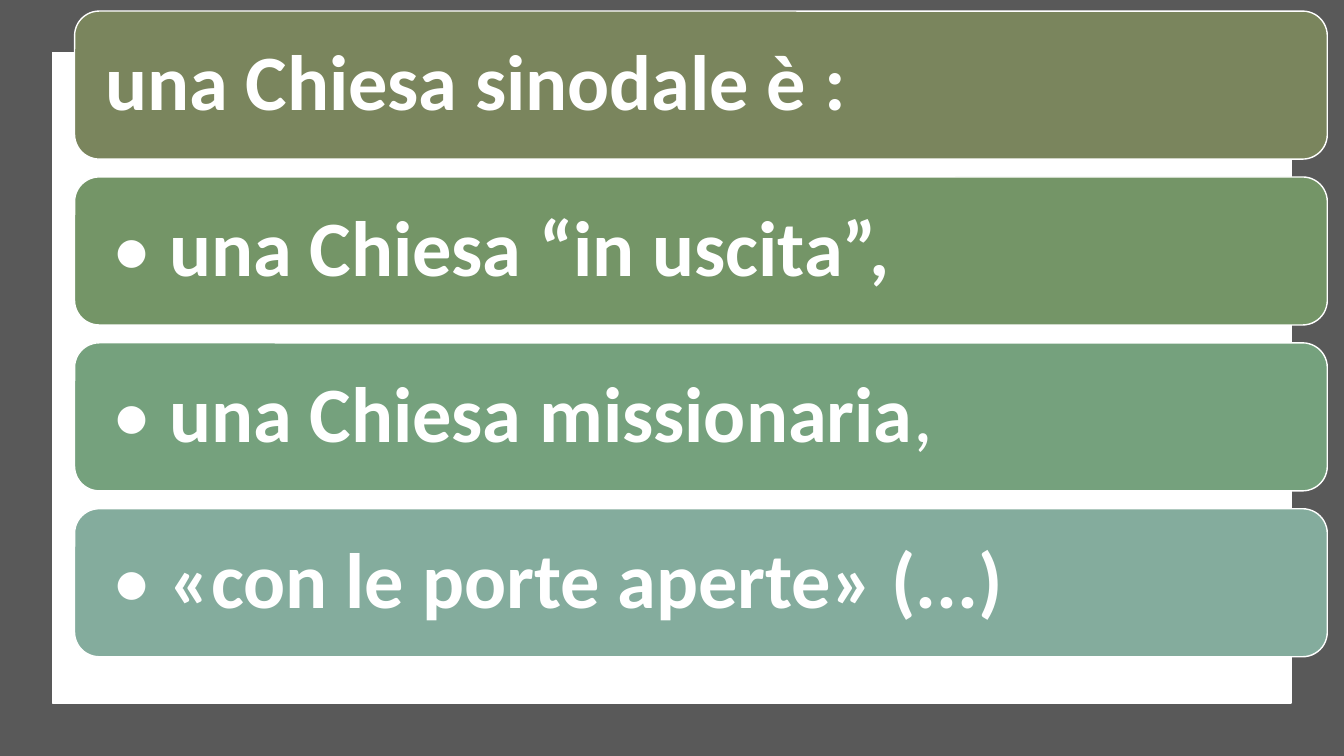
from pptx import Presentation
from pptx.dml.color import RGBColor
from pptx.enum.shapes import MSO_SHAPE
from pptx.enum.text import MSO_ANCHOR, MSO_AUTO_SIZE, PP_ALIGN
from pptx.util import Cm, Pt

RECT, ROUND = MSO_SHAPE.RECTANGLE, MSO_SHAPE.ROUNDED_RECTANGLE
MIDDLE, LEFT, FIXED = MSO_ANCHOR.MIDDLE, PP_ALIGN.LEFT, MSO_AUTO_SIZE.NONE
WIDTH, HEIGHT = 33.87, 19.05
COLORS = {
    "white": "FFFFFF",
    "frame": "595959",
    "olive": "7A855D",
    "moss": "749567",
    "green": "75A17D",
    "teal": "84AC9D",
}
BULLET = ("• ", False)
ITEMS = [
    ("moss", [BULLET, ("una Chiesa “in uscita”,", True)]),
    ("green", [BULLET, ("una Chiesa missionaria", True), (",", False)]),
    ("teal", [BULLET, ("«con le porte aperte» (...)", True)]),
]
BAR_LEFT, BAR_TOP, BAR_WIDTH, BAR_HEIGHT, STEP = 1.88, 0.28, 31.57, 3.73, 4.18


class Painter:
    """Draws styled elements on the current slide."""

    def __init__(self, slide, font, size):
        self.slide, self.font, self.size = slide, font, size

    def color(self, name):
        return RGBColor.from_string(COLORS[name])

    def box(self, kind, place, fill, line=None):
        shape = self.slide.shapes.add_shape(kind, *map(Cm, place))
        shape.shadow.inherit = False
        shape.fill.solid()
        shape.fill.fore_color.rgb = self.color(fill)
        if line:
            shape.line.color.rgb = self.color(line)
            shape.line.width = Pt(1)
        else:
            shape.line.fill.background()
        return shape

    def label(self, shape, runs):
        frame = shape.text_frame
        frame.word_wrap, frame.auto_size = True, FIXED
        frame.vertical_anchor = MIDDLE
        frame.margin_left = frame.margin_right = Cm(0.77)
        frame.margin_top = frame.margin_bottom = Cm(0.77)
        para = frame.paragraphs[0]
        para.alignment, para.line_spacing = LEFT, 0.9
        para.font.name, para.font.size = self.font, Pt(self.size)
        para.font.color.rgb = self.color("white")
        for text, bold in runs:
            run = para.add_run()
            run.text, run.font.bold = text, bold

    def bar(self, row, fill):
        place = BAR_LEFT, BAR_TOP + row * STEP, BAR_WIDTH, BAR_HEIGHT
        return self.box(ROUND, place, fill, "white")

    def title(self, bar, text):
        title = self.slide.shapes.title
        title.left, title.top = bar.left, bar.top
        title.width, title.height = bar.width, bar.height
        bar.element.addnext(title.element)
        self.label(title, [(text, True)])


def main():
    deck = Presentation()
    deck.slide_width, deck.slide_height = Cm(WIDTH), Cm(HEIGHT)
    slide = deck.slides.add_slide(deck.slide_layouts[5])
    paint = Painter(slide, "Calibri", 56)
    paint.box(RECT, (0, 0, WIDTH, HEIGHT), "frame")
    paint.box(RECT, (1.32, 1.32, 31.22, 16.4), "white", "white")
    paint.title(paint.bar(0, "olive"), "una Chiesa sinodale è :")
    for row, (fill, runs) in enumerate(ITEMS, 1):
        paint.label(paint.bar(row, fill), runs)
    deck.save("out.pptx")


if __name__ == "__main__":
    main()
